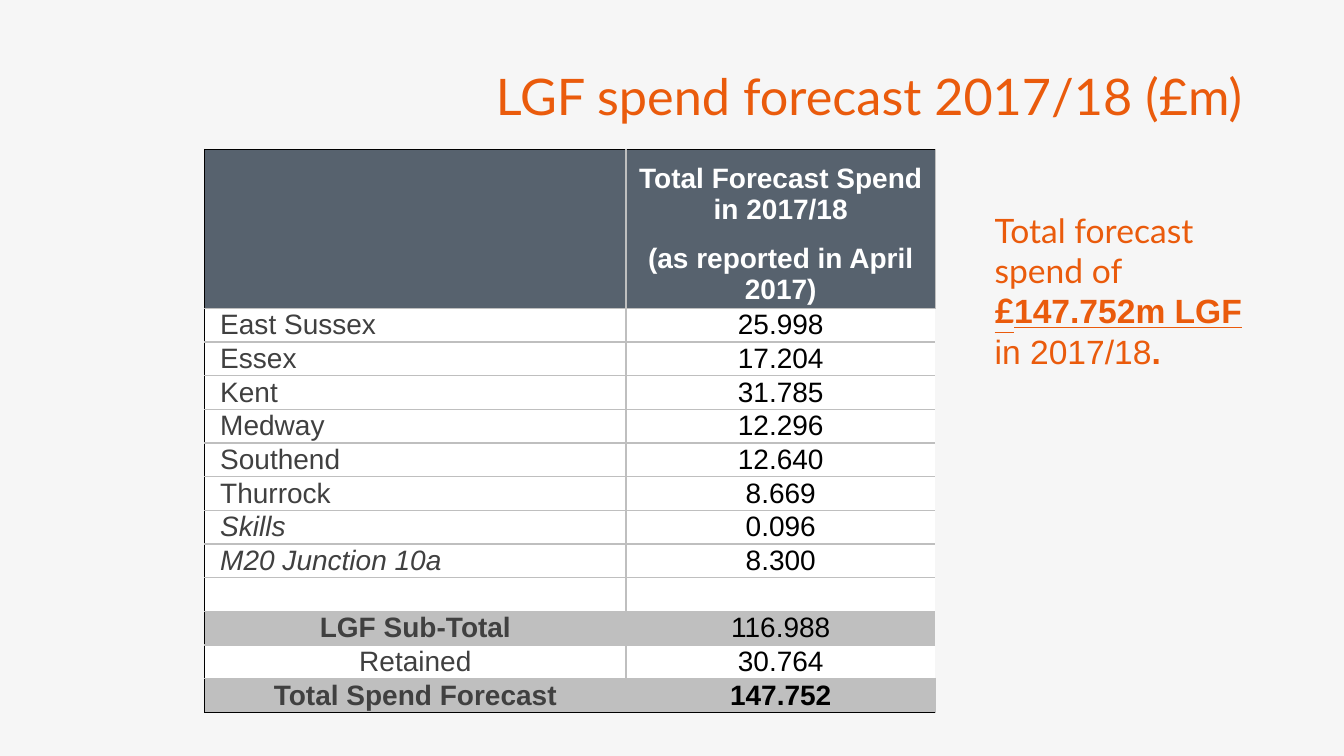
import pptx
import pptx.util
import pptx.dml.color
import pptx.enum.text
import pptx.oxml.ns
import lxml.etree

Pt = pptx.util.Pt
Align = pptx.enum.text.PP_ALIGN
Mid = pptx.enum.text.MSO_ANCHOR.MIDDLE

ORANGE, SLATE, GREY, DARK = "EA5B0C", "57626E", "BFBFBF", "404040"
WHITE, BLACK = "FFFFFF", "000000"
THIN, RULE = (BLACK, 0.5), (GREY, 1)


def color(code):
    return pptx.dml.color.RGBColor.from_string(code)


def write(para, text, size=20, face="Arial", ink=BLACK, bold=False,
          slant=False, under=False):
    run = para.add_run()
    run.text = text
    font = run.font
    font.size, font.name = Pt(size), face
    font.color.rgb = color(ink)
    font.bold, font.italic, font.underline = bold, slant, under


class Deck:
    def __init__(self):
        self.show = pptx.Presentation()
        self.show.slide_width, self.show.slide_height = Pt(960), Pt(540)
        self.slide = self.show.slides.add_slide(self.show.slide_layouts[6])
        back = self.slide.background.fill
        back.solid()
        back.fore_color.rgb = color("F6F6F6")

    def box(self, place, runs, align=Align.LEFT, anchor=None, lead=None, **style):
        frame = self.slide.shapes.add_textbox(*map(Pt, place)).text_frame
        frame.word_wrap = True
        frame.vertical_anchor = anchor
        para = frame.paragraphs[0]
        para.alignment, para.line_spacing = align, lead
        for text, extra in runs:
            write(para, text, **{**style, **extra})

    def table(self, left, top, cols, rows):
        frame = self.slide.shapes.add_table(
            len(rows), len(cols), Pt(left), Pt(top), Pt(sum(cols)), Pt(sum(rows)))
        grid = frame.table
        grid.first_row = grid.horz_banding = False
        for col, width in zip(grid.columns, cols):
            col.width = Pt(width)
        for row, height in zip(grid.rows, rows):
            row.height = Pt(height)
        return grid

    def cell(self, cell, text, fill, edges, align=Align.CENTER, inset=0, **style):
        """Edges come in the order left, right, top, bottom."""
        props = cell._tc.get_or_add_tcPr()
        for side, edge in zip("LRTB", edges):
            line = lxml.etree.SubElement(props, pptx.oxml.ns.qn("a:ln" + side))
            if edge is None:
                lxml.etree.SubElement(line, pptx.oxml.ns.qn("a:noFill"))
                continue
            line.set("w", str(Pt(edge[1])))
            solid = lxml.etree.SubElement(line, pptx.oxml.ns.qn("a:solidFill"))
            lxml.etree.SubElement(solid, pptx.oxml.ns.qn("a:srgbClr"), val=edge[0])
        cell.fill.solid()
        cell.fill.fore_color.rgb = color(fill)
        cell.margin_left = Pt(inset)
        cell.margin_right = cell.margin_top = cell.margin_bottom = 0
        cell.vertical_anchor = Mid
        para = cell.text_frame.paragraphs[0]
        para.alignment = align
        if text:
            write(para, text, **style)
        else:
            para.font.size, para.font.name = Pt(20), "Arial"


def main():
    deck = Deck()

    # Title
    deck.box((297.4, 43.9, 596.9, 53.3), [("LGF spend forecast 2017/18 (£m)", {})],
             align=Align.RIGHT, anchor=Mid, lead=0.9, size=36, face="Lato", ink=ORANGE)

    # Table: area, spend, kind of row
    body = [
        ("East Sussex", "25.998", "area"),
        ("Essex", "17.204", "area"),
        ("Kent", "31.785", "area"),
        ("Medway", "12.296", "area"),
        ("Southend", "12.640", "area"),
        ("Thurrock", "8.669", "area"),
        ("Skills", "0.096", "other"),
        ("M20 Junction 10a", "8.300", "other"),
        ("", "", "area"),
        ("LGF Sub-Total", "116.988", "sum"),
        ("Retained", "30.764", "plain"),
        ("Total Spend Forecast", "147.752", "total"),
    ]
    grid = deck.table(146.2, 106.5, [301, 221], [64.8, 49] + [22.35] * len(body))

    # Header
    grid.cell(0, 0).merge(grid.cell(1, 0))
    heads = ["Total Forecast Spend in 2017/18", "(as reported in April 2017)"]
    for row, head in enumerate(heads):
        top, base = (THIN, None) if row == 0 else (None, RULE)
        deck.cell(grid.cell(row, 0), "", SLATE, (THIN, RULE, top, RULE))
        deck.cell(grid.cell(row, 1), head, SLATE, (RULE, RULE, top, base),
                  ink=WHITE, bold=True)

    # Body
    for row, (name, spend, kind) in enumerate(body, len(heads)):
        strong, last = kind in ("sum", "total"), kind == "total"
        fill = GREY if strong else WHITE
        base = THIN if last else RULE
        inset, align = 0, Align.CENTER
        if kind in ("area", "other"):
            inset, align = 11.1, Align.LEFT
        deck.cell(grid.cell(row, 0), name, fill, (THIN, RULE, RULE, base), align,
                  inset, ink=DARK, bold=strong, slant=kind == "other")
        deck.cell(grid.cell(row, 1), spend, fill,
                  (RULE, RULE if last else None, RULE, base), bold=last)

    # Side note
    deck.box((703.4, 146.2, 210.2, 152.6), [
        ("Total forecast spend of ", {"face": "Lato"}),
        ("£", {"face": "Lato", "bold": True, "under": True}),
        ("147.752m LGF ", {"bold": True, "under": True}),
        ("in 2017/18", {}),
        (".", {"bold": True}),
    ], size=24, ink=ORANGE)

    deck.show.save("out.pptx")


if __name__ == "__main__":
    main()
